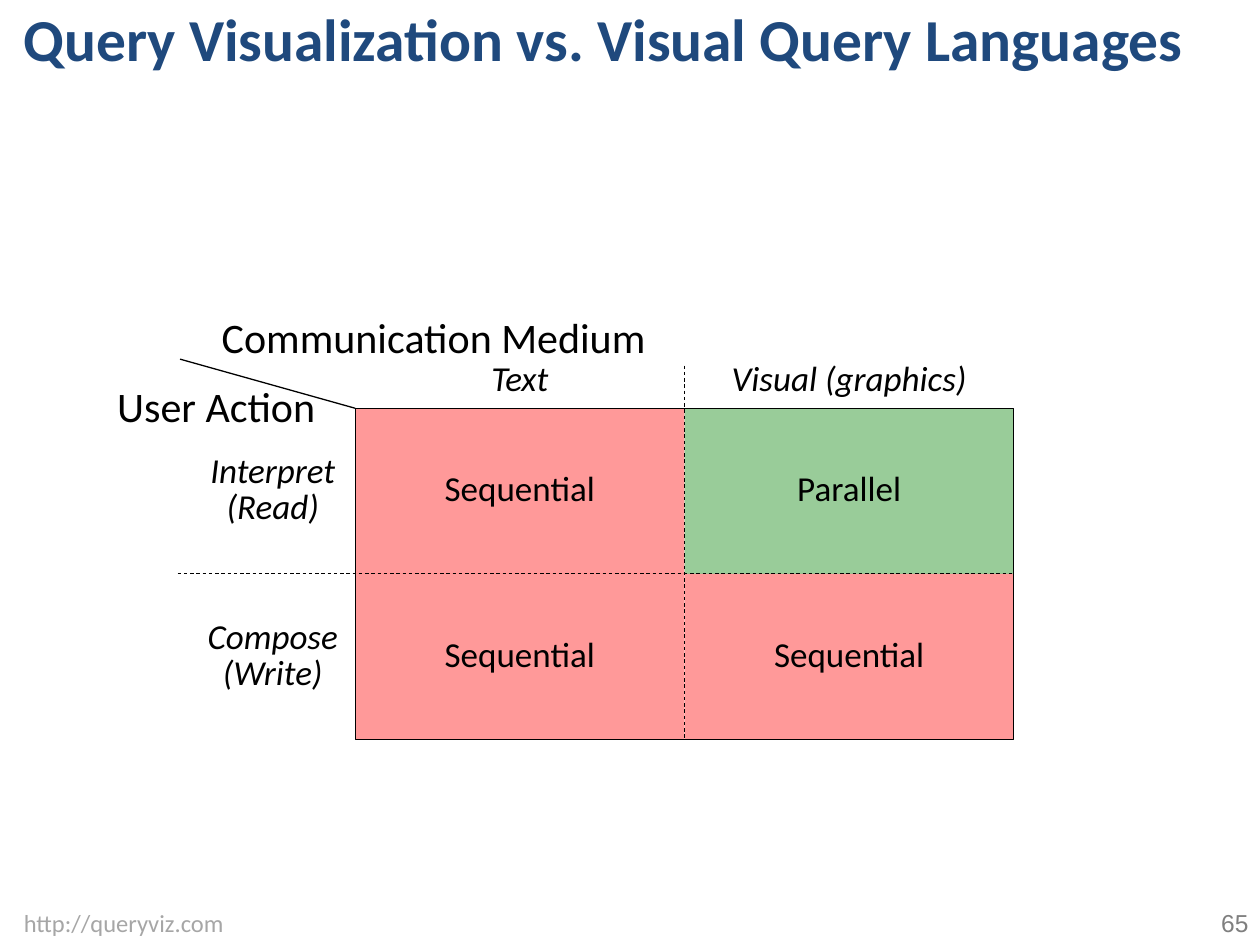
"""Build a slide comparing query visualization with visual query languages."""
from pptx import Presentation
from pptx.dml.color import RGBColor
from pptx.enum.dml import MSO_LINE as Dash
from pptx.enum.shapes import MSO_CONNECTOR as Connector, MSO_SHAPE as Shape
from pptx.enum.text import MSO_ANCHOR as Anchor, MSO_AUTO_SIZE as AutoSize, PP_ALIGN as Align
from pptx.oxml.ns import qn
from pptx.util import Cm, Pt

COLORS = {"title": "1F497D", "text": "000000", "link": "A6A6A6", "number": "7F7F7F",
          "Sequential": "FF0000", "Parallel": "008000"}
OPACITY = 40

MATRIX = [["Sequential", "Parallel"], ["Sequential", "Sequential"]]
COLUMN_LABELS = [("Text", 1.4), ("Visual (graphics)", 4.95)]
ROW_LABELS = [("Interpret\n(Read)", 2.72), ("Compose\n(Write)", 2.82)]
CELL_TEXT_WIDTHS = {"Sequential": 3.07, "Parallel": 2.13}

LABEL = {"size": Pt(20), "italic": True}
ENTRY = {"size": Pt(20)}
AXIS = {"size": Pt(24)}
MATRIX_PARAGRAPH = {"line_spacing": 0.85, "alignment": Align.CENTER}
LINE_HEIGHT = 0.74

HEADINGS = [
    ("User Action", (2.34, 7.82, 4.04, 0.89), Align.CENTER),
    ("Communication Medium", (4.47, 6.43, 8.76, 0.89), Align.LEFT),
]
PAGE_TEXTS = [
    ("http://queryviz.com", (0.48, 18.31, 4.06, 0.61), "link", Align.LEFT, {"size": Pt(14)}),
    ("Query Visualization vs. Visual Query Languages", (0.48, 0.05, 23.65, 1.45), "title",
     Align.LEFT, {"size": Pt(34), "bold": True}),
    ("65", (24.56, 18.31, 0.61, 0.61), "number", Align.RIGHT,
     {"size": Pt(14), "name": "Arial"}),
]

LEFT, TOP = 7.16, 8.23
CELL_WIDTH, CELL_HEIGHT = 6.64, 3.34
COLUMN_LABEL_Y, ROW_LABEL_X = 7.68, 5.5

presentation = Presentation()
presentation.slide_width, presentation.slide_height = Cm(25.4), Cm(19.05)
slide = presentation.slides.add_slide(presentation.slide_layouts[6])


def color(name):
    return RGBColor.from_string(COLORS[name])


def set_all(target, values):
    for name, value in values.items():
        setattr(target, name, value)


def add_text(text, box, font, paragraph_format, color_name="text", anchor=Anchor.MIDDLE):
    frame = slide.shapes.add_textbox(*map(Cm, box)).text_frame
    set_all(frame, {"margin_left": 0, "margin_top": 0, "margin_right": 0, "margin_bottom": 0,
                    "word_wrap": False, "auto_size": AutoSize.SHAPE_TO_FIT_TEXT,
                    "vertical_anchor": anchor, "text": text})
    for paragraph in frame.paragraphs:
        set_all(paragraph, paragraph_format)
        for run in paragraph.runs:
            set_all(run.font, {"name": "Calibri", **font})
            run.font.color.rgb = color(color_name)


def add_centered(text, center_x, center_y, width, font):
    height = LINE_HEIGHT * len(text.split("\n"))
    box = (center_x - width / 2, center_y - height / 2, width, height)
    add_text(text, box, font, MATRIX_PARAGRAPH)


def add_rectangle(left, top, width, height):
    shape = slide.shapes.add_shape(Shape.RECTANGLE, *map(Cm, (left, top, width, height)))
    shape.shadow.inherit = False
    return shape


def add_line(start, end, width, dash=None):
    line = slide.shapes.add_connector(Connector.STRAIGHT, *map(Cm, (*start, *end)))
    line.line.color.rgb = color("text")
    set_all(line.line, {"width": Pt(width), "dash_style": dash})
    properties = line.element.spPr
    properties.append(properties.makeelement(qn("a:effectLst"), {}))
    return line


def column_center(column):
    return LEFT + (column + 0.5) * CELL_WIDTH


def row_center(row):
    return TOP + (row + 0.5) * CELL_HEIGHT


for row, entries in enumerate(MATRIX):
    for column, entry in enumerate(entries):
        cell = add_rectangle(LEFT + column * CELL_WIDTH, TOP + row * CELL_HEIGHT,
                             CELL_WIDTH, CELL_HEIGHT)
        cell.fill.solid()
        cell.fill.fore_color.rgb = color(entry)
        cell.line.fill.background()
        tint = cell.element.spPr.find(".//" + qn("a:srgbClr"))
        tint.append(tint.makeelement(qn("a:alpha"), {"val": str(OPACITY * 1000)}))

frame_shape = add_rectangle(LEFT, TOP, 2 * CELL_WIDTH, 2 * CELL_HEIGHT)
frame_shape.fill.background()
frame_shape.line.color.rgb = color("text")
frame_shape.line.width = Pt(0.5)

middle_x, middle_y = LEFT + CELL_WIDTH, TOP + CELL_HEIGHT
column_divider = add_line((middle_x, 7.37), (middle_x, TOP + 2 * CELL_HEIGHT), 0.5, Dash.DASH)
column_divider.end_connect(frame_shape, 2)
row_divider = add_line((3.58, middle_y), (LEFT + 2 * CELL_WIDTH, middle_y), 0.5, Dash.DASH)
row_divider.end_connect(frame_shape, 3)
add_line((LEFT, TOP), (3.63, 7.24), 0.75)

for row, entries in enumerate(MATRIX):
    for column, entry in enumerate(entries):
        add_centered(entry, column_center(column), row_center(row),
                     CELL_TEXT_WIDTHS[entry], ENTRY)
for column, (label, width) in enumerate(COLUMN_LABELS):
    add_centered(label, column_center(column), COLUMN_LABEL_Y, width, LABEL)
for row, (label, width) in enumerate(ROW_LABELS):
    add_centered(label, ROW_LABEL_X, row_center(row), width, LABEL)
for text, box, alignment in HEADINGS:
    add_text(text, box, AXIS, {**MATRIX_PARAGRAPH, "alignment": alignment})
for text, box, color_name, alignment, font in PAGE_TEXTS:
    add_text(text, box, font, {"alignment": alignment}, color_name, Anchor.TOP)

presentation.save("out.pptx")
